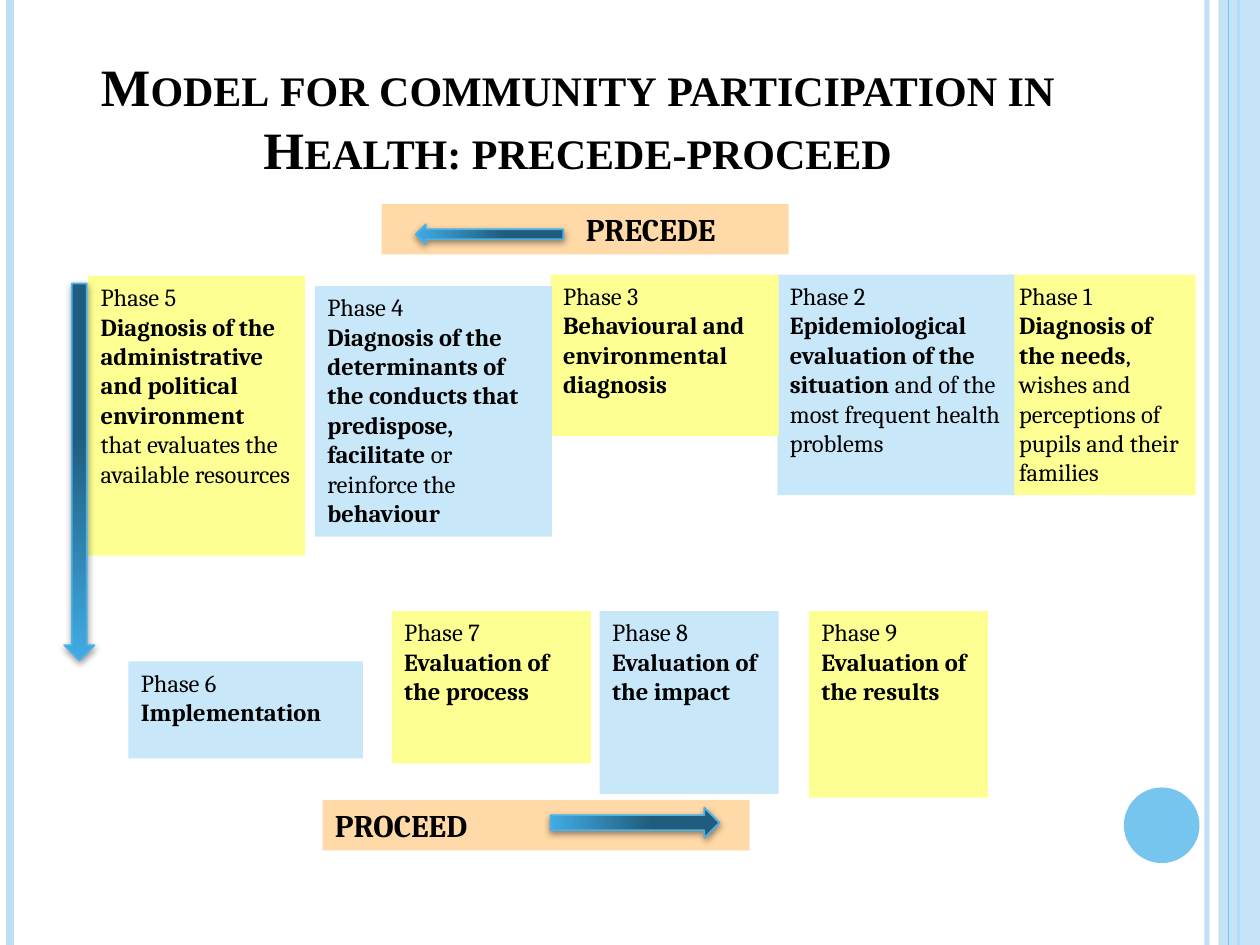
import pptx
import pptx.dml.color
import pptx.enum.shapes
import pptx.enum.text
import pptx.oxml
import pptx.oxml.ns
import pptx.util

SHAPE = pptx.enum.shapes.MSO_SHAPE
ALIGN = pptx.enum.text.PP_ALIGN
ANCHOR = pptx.enum.text.MSO_ANCHOR
inches = pptx.util.Inches

WIDTH, HEIGHT = 10, 7.5
COLORS = {
    "black": "000000", "yellow": "FDFF93", "blue": "C8E8F9", "orange": "FFD9A7",
    "pale": "BDDFF6", "sky": "76C5EF", "arrow light": "40ABE4",
    "arrow dark": "205C7D", "arrow edge": "4BB1E7",
}
DIAGNOSIS_TOP, EVALUATION_TOP = 2.18, 4.85

# Box, colour, and paragraphs of (text, bold) runs below the phase heading.
PHASES = {
    1: ((7.99, DIAGNOSIS_TOP, 1.5, 1.75), "yellow",
        [[("Diagnosis of the needs", True),
          (", wishes and perceptions of pupils and their families", False)]]),
    2: ((6.17, DIAGNOSIS_TOP, 1.88, 1.75), "blue",
        [[("Epidemiological", True)],
         [("evaluation of the situation ", True),
          ("and of the most frequent health problems", False)]]),
    3: ((4.37, DIAGNOSIS_TOP, 1.81, 1.28), "yellow",
        [[("Behavioural and environmental diagnosis", True)]]),
    4: ((2.5, 2.27, 1.88, 1.99), "blue",
        [[("Diagnosis of the determinants of the conducts that predispose, facilitate ", True),
          ("or reinforce the ", False), ("behaviour", True)]]),
    5: ((0.7, 2.19, 1.72, 2.22), "yellow",
        [[("Diagnosis of the administrative and political environment", True)],
         [("that evaluates the available resources", False)]]),
    6: ((1.02, 5.25, 1.86, 0.77), "blue", [[("Implementation", True)]]),
    7: ((3.11, EVALUATION_TOP, 1.58, 1.21), "yellow",
        [[("Evaluation of the process", True)]]),
    8: ((4.76, EVALUATION_TOP, 1.42, 1.45), "blue",
        [[("Evaluation of the impact", True)]]),
    9: ((6.42, EVALUATION_TOP, 1.42, 1.48), "yellow",
        [[("Evaluation of the results", True)]]),
}


def rgb(color):
    return pptx.dml.color.RGBColor.from_string(COLORS[color])


def xml(markup):
    """Parse one element of the drawing namespace."""
    return pptx.oxml.parse_xml(markup.replace(
        "/>" if markup.endswith("/>") and markup.count("<") == 1 else ">",
        " " + pptx.oxml.ns.nsdecls("a")
        + ("/>" if markup.endswith("/>") and markup.count("<") == 1 else ">"), 1))


def set_opacity(element, percent):
    color = element.find(".//" + pptx.oxml.ns.qn("a:srgbClr"))
    color.append(xml(f'<a:alpha val="{percent * 1000}"/>'))


def write(paragraph, text, size=14, font="Cambria", bold=False, small_caps=False):
    run = paragraph.add_run()
    run.text = text
    run.font.size = pptx.util.Pt(size)
    run.font.name = font
    run.font.bold = bold
    run.font.color.rgb = rgb("black")
    if small_caps:
        run.font._element.set("cap", "small")


def add_block(slide, kind, box, color):
    block = slide.shapes.add_shape(kind, *map(inches, box))
    block.shadow.inherit = False
    block.fill.solid()
    block.fill.fore_color.rgb = rgb(color)
    block.line.fill.background()
    return block


def start_text(block, anchor, left_inset=0.1):
    """Prepare a block for left-aligned text and return its first paragraph."""
    frame = block.text_frame
    frame.word_wrap = True
    frame.vertical_anchor = anchor
    frame.margin_left = inches(left_inset)
    frame.paragraphs[0].alignment = ALIGN.LEFT
    return frame.paragraphs[0]


def add_stripe(slide, x, color, width, opacity=100):
    stripe = slide.shapes.add_connector(
        pptx.enum.shapes.MSO_CONNECTOR.STRAIGHT,
        inches(x), 0, inches(x), inches(HEIGHT))
    stripe.line.color.rgb = rgb(color)
    stripe.line.width = pptx.util.Pt(width)
    stripe._element.spPr.append(xml("<a:effectLst/>"))
    if opacity < 100:
        set_opacity(stripe._element.spPr, opacity)


def add_border(slide):
    add_stripe(slide, 9.58, "pale", 3, opacity=93)
    add_stripe(slide, 0.08, "pale", 4.5)
    add_stripe(slide, 9.83, "sky", 1.5)
    side = add_block(slide, SHAPE.RECTANGLE, (9.67, 0, WIDTH - 9.67, HEIGHT), "pale")
    set_opacity(side._element.spPr, 87)
    add_stripe(slide, 9.75, "sky", 0.75)
    add_block(slide, SHAPE.OVAL, (8.92, 6.25, 0.6, 0.6), "sky")


def add_title(slide, text):
    title = slide.shapes.title
    title.left, title.top, title.width, title.height = map(inches, (0.5, 0.3, 8.17, 1.25))
    title.text_frame.auto_size = pptx.enum.text.MSO_AUTO_SIZE.NONE
    title.text_frame.vertical_anchor = ANCHOR.MIDDLE
    paragraph = title.text_frame.paragraphs[0]
    paragraph.alignment = ALIGN.CENTER
    write(paragraph, text, size=30, font="Times New Roman", bold=True, small_caps=True)


def add_phase(slide, number, box, color, paragraphs):
    block = add_block(slide, SHAPE.RECTANGLE, box, color)
    write(start_text(block, ANCHOR.TOP), f"Phase {number}")
    for runs in paragraphs:
        paragraph = block.text_frame.add_paragraph()
        paragraph.alignment = ALIGN.LEFT
        for text, bold in runs:
            write(paragraph, text, bold=bold)


def add_band(slide, box, text, left_inset=0.1):
    band = add_block(slide, SHAPE.RECTANGLE, box, "orange")
    write(start_text(band, ANCHOR.MIDDLE, left_inset), text, size=18, bold=True)


def add_arrow(slide, kind, box, angle=0):
    """Add a shaded arrow; angle is the direction from light to dark."""
    arrow = add_block(slide, kind, box, "arrow light")
    arrow.fill.gradient()
    arrow.fill.gradient_angle = angle
    for stop, color, position in zip(
            arrow.fill.gradient_stops, ("arrow light", "arrow dark"), (0, 0.6)):
        stop.color.rgb = rgb(color)
        stop.position = position
    arrow.line.color.rgb = rgb("arrow edge")
    arrow.line.width = pptx.util.Pt(1)
    effects = arrow._element.spPr.find(pptx.oxml.ns.qn("a:effectLst"))
    effects.append(xml(
        f'<a:outerShdw blurRad="{pptx.util.Pt(4)}" dist="{pptx.util.Pt(1.6)}" '
        'dir="5400000" rotWithShape="0"><a:srgbClr val="000000"/></a:outerShdw>'))
    set_opacity(effects, 42)


def main():
    deck = pptx.Presentation()
    deck.slide_width, deck.slide_height = inches(WIDTH), inches(HEIGHT)
    slide = deck.slides.add_slide(deck.slide_layouts.get_by_name("Title Only"))
    add_border(slide)
    add_title(slide, "Model for community participation in Health: precede-proceed")
    for number, (box, color, paragraphs) in PHASES.items():
        add_phase(slide, number, box, color, paragraphs)
    add_band(slide, (3.03, 1.62, 3.23, 0.4), "PRECEDE", left_inset=1.62)
    add_arrow(slide, SHAPE.LEFT_ARROW, (3.3, 1.78, 1.17, 0.16))
    add_band(slide, (2.56, 6.35, 3.39, 0.4), "PROCEED")
    add_arrow(slide, SHAPE.RIGHT_ARROW, (4.37, 6.41, 1.34, 0.24))
    add_arrow(slide, SHAPE.DOWN_ARROW, (0.51, 2.25, 0.24, 2.99), angle=90)
    deck.save("out.pptx")


if __name__ == "__main__":
    main()
